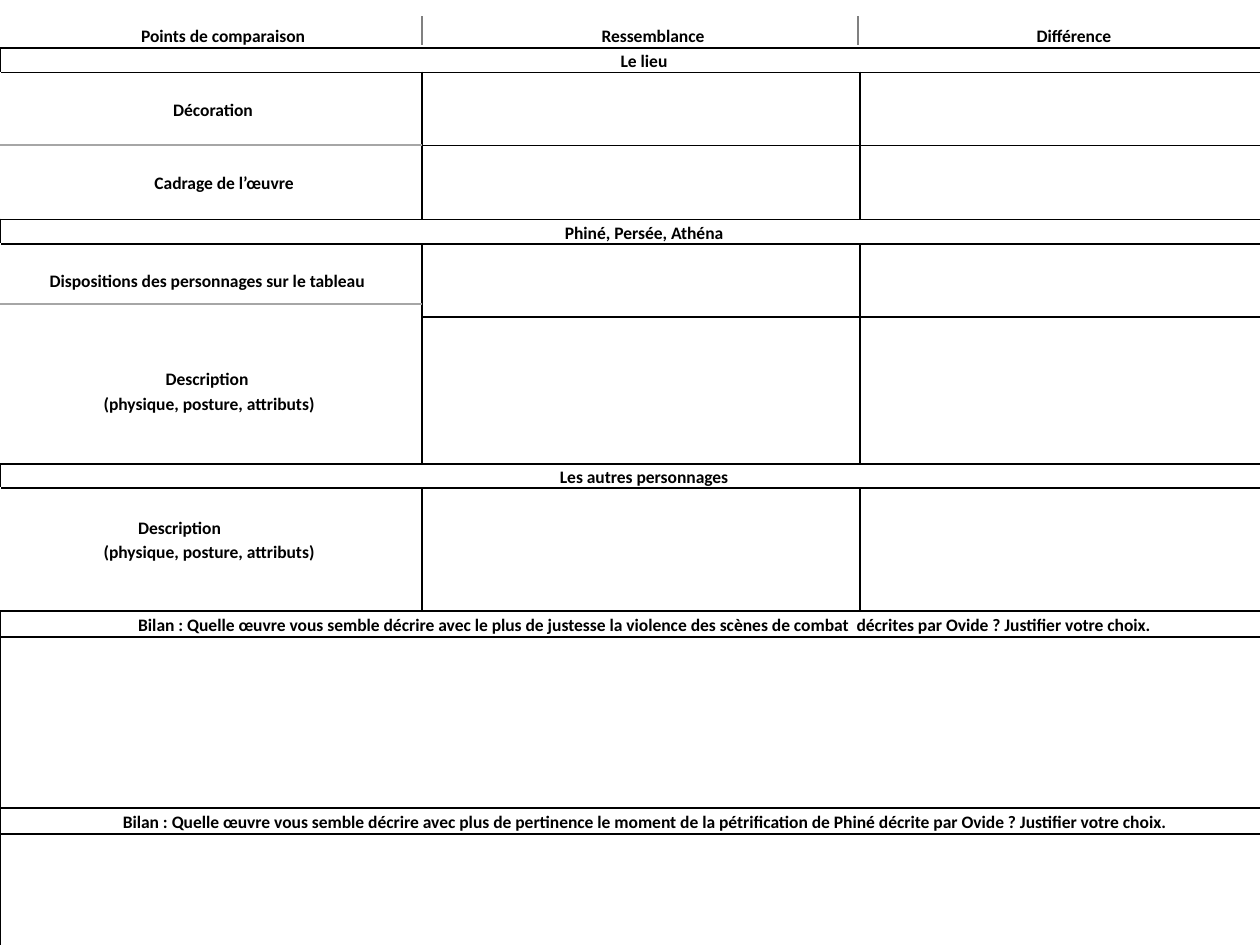
"""Build a one-slide comparison worksheet laid out as a table."""
import pptx
import pptx.dml.color
import pptx.enum.shapes
import pptx.enum.text
import pptx.oxml
import pptx.oxml.ns
import pptx.util

BLACK = pptx.dml.color.RGBColor(0x00, 0x00, 0x00)
WHITE = pptx.dml.color.RGBColor(0xFF, 0xFF, 0xFF)
GREY = pptx.dml.color.RGBColor(0x80, 0x80, 0x80)
LIGHT_GREY = pptx.dml.color.RGBColor(0xA6, 0xA6, 0xA6)

COLUMN_WIDTHS = [422, 438, 404]
ROW_HEIGHTS = [27, 24, 73, 74, 24, 73, 147, 24, 123, 26, 171, 26, 126]
HEADINGS = ["Points de comparaison", "Ressemblance", "Différence"]
SECTIONS = {
    1: "Le lieu",
    4: "Phiné, Persée, Athéna",
    7: "Les autres personnages",
    9: "Bilan : Quelle œuvre vous semble décrire avec le plus de justesse la violence "
       "des scènes de combat  décrites par Ovide ? Justifier votre choix.",
    10: "",
    11: "Bilan : Quelle œuvre vous semble décrire avec plus de pertinence le moment "
        "de la pétrification de Phiné décrite par Ovide ? Justifier votre choix.",
    12: "",
}
DETAIL = "(physique, posture, attributs)"
# row: lines as (text, left indent, right indent), bottom margin, white borders
CRITERIA = {
    2: ([("Décoration", 4, 0)], 0, "LB"),
    3: ([("Cadrage de l’œuvre", 26, 0)], 0, "LT"),
    5: ([("Dispositions des personnages sur le tableau", 0, 8)], 0, "LB"),
    6: ([("Description", 0, 8), (DETAIL, 0, 4)], 0, "LT"),
    8: ([("Description", 0, 63), (DETAIL, 0, 4)], 22, "L"),
}


def px(length):
    return pptx.util.Emu(round(length * 914400 / 126))


def write(paragraph, text, size=10, color=BLACK, bold=True, left=87, right=63):
    paragraph.alignment = pptx.enum.text.PP_ALIGN.CENTER
    paragraph.line_spacing = 1.15
    properties = paragraph._p.get_or_add_pPr()
    properties.set("marL", str(px(left)))
    properties.set("marR", str(px(right)))
    properties.set("indent", "0")
    run = paragraph.add_run()
    run.text = text
    run.font.name = "Calibri"
    run.font.size = pptx.util.Pt(size)
    run.font.bold = bold
    run.font.color.rgb = color


class Worksheet:
    def __init__(self, slide, line_width=1.5, border_width=1):
        self.slide = slide
        self.line_width = pptx.util.Pt(line_width)
        self.border_width = pptx.util.Pt(border_width)

    def table(self, left, top, widths, heights):
        frame = self.slide.shapes.add_table(
            len(heights), len(widths), px(left), px(top), px(sum(widths)), px(sum(heights)))
        table = frame.table
        table.first_row = table.horz_banding = False
        for column, width in zip(table.columns, widths):
            column.width = px(width)
        for row, height in zip(table.rows, heights):
            row.height = px(height)
        return table

    def cell(self, cell, lines=(), white="", bottom=0):
        cell.margin_left = cell.margin_right = px(5)
        cell.margin_top, cell.margin_bottom = 0, px(bottom)
        cell.vertical_anchor = pptx.enum.text.MSO_ANCHOR.MIDDLE
        cell.fill.solid()
        cell.fill.fore_color.rgb = WHITE
        self.borders(cell, white)
        for index, (text, *indents) in enumerate(lines):
            frame = cell.text_frame
            paragraph = frame.add_paragraph() if index else frame.paragraphs[0]
            write(paragraph, text, **dict(zip(("left", "right"), indents)))

    def borders(self, cell, white):
        properties = cell._tc.get_or_add_tcPr()
        for index, side in enumerate("LRTB"):
            color = WHITE if side in white else BLACK
            properties.insert(index, pptx.oxml.parse_xml(
                f'<a:ln{side} {pptx.oxml.ns.nsdecls("a")} w="{self.border_width}">'
                f'<a:solidFill><a:srgbClr val="{color}"/></a:solidFill></a:ln{side}>'))

    def line(self, start, end, color):
        connector = self.slide.shapes.add_connector(
            pptx.enum.shapes.MSO_CONNECTOR.STRAIGHT, *map(px, start + end))
        connector.line.color.rgb = color
        connector.line.width = self.line_width
        connector._element.spPr.append(
            pptx.oxml.parse_xml(f'<a:effectLst {pptx.oxml.ns.nsdecls("a")}/>'))


def main():
    presentation = pptx.Presentation()
    presentation.slide_width, presentation.slide_height = px(1260), px(945)
    worksheet = Worksheet(presentation.slides.add_slide(presentation.slide_layouts[6]))
    table = worksheet.table(0, 21, COLUMN_WIDTHS, ROW_HEIGHTS)

    for column, heading in enumerate(HEADINGS):
        worksheet.cell(table.cell(0, column), [(heading,)], white="LTR")
    for row, title in SECTIONS.items():
        for column in range(len(COLUMN_WIDTHS)):
            lines = [(title,)] if title and column == 0 else []
            worksheet.cell(table.cell(row, column), lines)
        table.cell(row, 0).merge(table.cell(row, len(COLUMN_WIDTHS) - 1))
    for row, (lines, bottom, white) in CRITERIA.items():
        worksheet.cell(table.cell(row, 0), lines, white, bottom)
        for column in range(1, len(COLUMN_WIDTHS)):
            worksheet.cell(table.cell(row, column))

    for y in (145, 304):
        worksheet.line((422, y), (0, y), LIGHT_GREY)
    for x in (422, 858):
        worksheet.line((x, 45), (x, 16), GREY)
    presentation.save("out.pptx")


if __name__ == "__main__":
    main()
